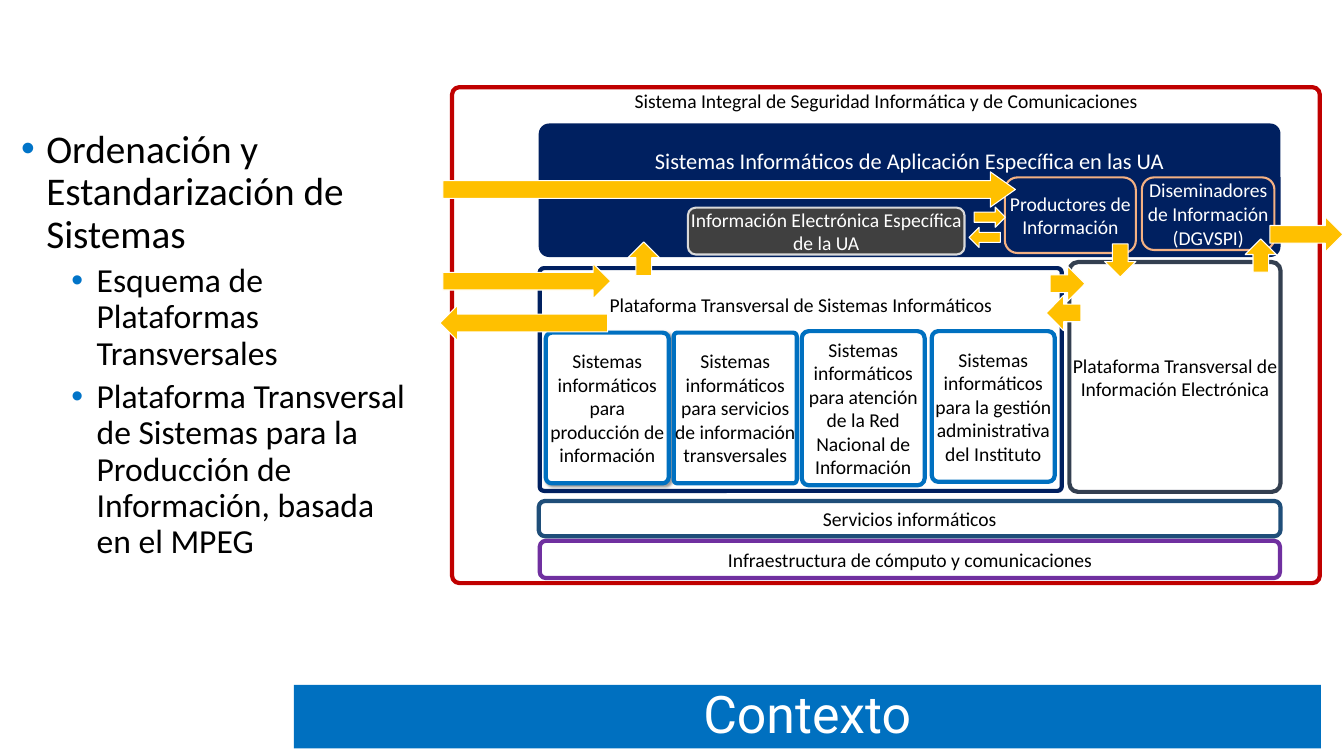
from lxml.etree import SubElement
from pptx import Presentation
from pptx.dml.color import RGBColor
from pptx.enum.shapes import MSO_SHAPE
from pptx.enum.text import MSO_ANCHOR, MSO_AUTO_SIZE, PP_ALIGN
from pptx.oxml.ns import qn
from pptx.util import Inches, Pt

NAVY, BLUE, GOLD, WHITE, BLACK = "002060", "0070C0", "FFC000", "FFFFFF", "000000"
ARROWS = {
    "up": MSO_SHAPE.UP_ARROW,
    "down": MSO_SHAPE.DOWN_ARROW,
    "left": MSO_SHAPE.LEFT_ARROW,
    "right": MSO_SHAPE.RIGHT_ARROW,
}


def rgb(value):
    return RGBColor.from_string(value)


def add_text(p, text, size=28, color=BLACK, font="Calibri", align=PP_ALIGN.CENTER,
             spacing=None, before=None):
    r = p.add_run()
    r.text = text
    r.font.size, r.font.name = Pt(size), font
    r.font.color.rgb = rgb(color)
    p.alignment = align
    if spacing:
        p.line_spacing = spacing
    if before:
        p.space_before = Pt(before)


def add_shape(s, kind, at, fill, line=None, width=6):
    sp = s.shapes.add_shape(kind, *map(Inches, at))
    sp.shadow.inherit = False
    sp.fill.solid()
    sp.fill.fore_color.rgb = rgb(fill)
    if line:
        sp.line.color.rgb = rgb(line)
        sp.line.width = Pt(width)
    else:
        sp.line.fill.background()
    return sp


def add_box(s, at, text, line=None, fill=WHITE, color=BLACK, size=28, corner=0.167,
            width=6, top=None):
    """Rounded box; text is centred, or starts at the inset `top` when given."""
    sp = add_shape(s, MSO_SHAPE.ROUNDED_RECTANGLE, at, fill, line, width)
    sp.adjustments[0] = corner
    tf = sp.text_frame
    tf.word_wrap = True
    tf.margin_left = tf.margin_right = tf.margin_bottom = 0
    tf.margin_top = Inches(top or 0)
    tf.vertical_anchor = MSO_ANCHOR.MIDDLE if top is None else MSO_ANCHOR.TOP
    for i, part in enumerate(text.split("\n")):
        p = tf.add_paragraph() if i else tf.paragraphs[0]
        add_text(p, part, size=size, color=color)
    return sp


def add_arrow(s, direction, at, head=0.5):
    sp = add_shape(s, ARROWS[direction], at, GOLD, WHITE, 1.5)
    sp.adjustments[1] = head


def add_soft_shadow(sp):
    effects = sp._element.spPr.find(qn("a:effectLst"))
    shadow = SubElement(effects, qn("a:outerShdw"), blurRad=str(Pt(4)),
                        dist=str(Pt(3)), dir="2700000")
    color = SubElement(shadow, qn("a:srgbClr"), val=BLACK)
    SubElement(color, qn("a:alpha"), val="40000")


def add_bullet(p, left):
    pPr = p._p.get_or_add_pPr()
    pPr.set("marL", str(Inches(left)))
    pPr.set("indent", str(Inches(-0.5)))
    color = SubElement(pPr, qn("a:buClr"))
    SubElement(color, qn("a:srgbClr"), val="0174C8")
    SubElement(pPr, qn("a:buFont"), typeface="Arial")
    SubElement(pPr, qn("a:buChar"), char="•")


def add_title(s):
    sp = s.shapes.title
    sp.left, sp.top, sp.width, sp.height = map(Inches, (5.83, 13.59, 20.38, 1.26))
    sp.fill.solid()
    sp.fill.fore_color.rgb = rgb(BLUE)
    tf = sp.text_frame
    tf.auto_size = MSO_AUTO_SIZE.NONE
    tf.vertical_anchor = MSO_ANCHOR.MIDDLE
    add_text(tf.paragraphs[0], "Contexto", size=74, color=WHITE, font="Roboto", spacing=0.9)


def add_bullets(s):
    items = [
        (0, "Ordenación y Estandarización de Sistemas"),
        (1, "Esquema de Plataformas Transversales"),
        (1, "Plataforma Transversal de Sistemas para la Producción de Información, "
            "basada en el MPEG"),
    ]
    tf = s.shapes.add_textbox(*map(Inches, (0.32, 1.71, 7.93, 10.28))).text_frame
    tf.word_wrap = True
    tf.vertical_anchor = MSO_ANCHOR.MIDDLE
    for i, (level, text) in enumerate(items):
        p = tf.add_paragraph() if i else tf.paragraphs[0]
        p.level = level
        add_bullet(p, 0.5 + level)
        add_text(p, text, size=48 if level else 56, align=PP_ALIGN.LEFT,
                 spacing=0.9, before=10 if i else None)


def add_platforms(s):
    # Security frame and application layer
    add_box(s, (8.97, 1.73, 17.22, 9.84),
            "Sistema Integral de Seguridad Informática y de Comunicaciones",
            "C00000", corner=0.015, top=0)
    add_box(s, (10.69, 2.45, 14.72, 2.65),
            "Sistemas Informáticos de Aplicación Específica en las UA",
            fill=NAVY, color=WHITE, size=32, corner=0.077, top=0.41)

    # Base layers
    add_box(s, (10.71, 10.73, 14.69, 0.74),
            "Infraestructura de cómputo y comunicaciones", "7030A0")
    add_box(s, (10.69, 9.94, 14.72, 0.7), "Servicios informáticos", "1F4E79", corner=0.178)

    # Transversal platforms
    add_box(s, (21.22, 5.2, 4.19, 4.56),
            "Plataforma Transversal de Información Electrónica", "333F50", corner=0.041)
    add_box(s, (10.71, 5.32, 10.36, 4.42),
            "Plataforma Transversal de Sistemas Informáticos", NAVY, corner=0.019, top=0.47)


def add_systems(s):
    systems = [
        (10.83, 6.6, 2.99, 0.049, "para producción de información"),
        (13.37, 6.6, 2.99, 0.029, "para servicios de información transversales"),
        (15.91, 6.57, 3.06, 0.058, "para atención de la Red Nacional de Información"),
        (18.49, 6.57, 2.99, 0.053, "para la gestión administrativa del Instituto"),
    ]
    boxes = [add_box(s, (x, y, 2.44, h), "Sistemas informáticos " + purpose, BLUE, corner=corner)
             for x, y, h, corner, purpose in systems]
    add_soft_shadow(boxes[0])


def add_units(s):
    add_box(s, (19.94, 3.52, 2.6, 1.5), "Productores de Información",
            "F4B183", NAVY, WHITE, width=3)
    add_box(s, (22.66, 3.52, 2.63, 1.44), "Diseminadores de Información\n(DGVSPI)",
            "F4B183", NAVY, WHITE, width=3)
    add_box(s, (13.65, 4.12, 5.49, 0.93), "Información Electrónica Específica de la UA",
            "D9D9D9", "404040", WHITE, width=3)


def add_flows(s):
    # Between layers
    add_arrow(s, "down", (21.92, 4.84, 0.62, 0.66))
    add_arrow(s, "up", (24.71, 4.74, 0.62, 0.66))
    add_arrow(s, "up", (12.46, 4.8, 0.63, 0.67))
    # Between platforms
    add_arrow(s, "right", (20.84, 5.28, 0.69, 0.7))
    add_arrow(s, "left", (20.76, 5.86, 0.69, 0.7))
    # Into and out of the frame
    add_arrow(s, "right", (25.2, 4.3, 1.45, 0.7))
    add_arrow(s, "right", (8.79, 3.41, 11.36, 0.7), head=0.71)
    add_arrow(s, "right", (8.79, 5.23, 3.33, 0.7))
    add_arrow(s, "left", (8.73, 6.06, 3.33, 0.7))
    # Between specific information and producers
    add_arrow(s, "right", (19.33, 4.11, 0.62, 0.4))
    add_arrow(s, "left", (19.23, 4.51, 0.62, 0.4))


def main():
    prs = Presentation()
    prs.slide_width, prs.slide_height = Inches(26.67), Inches(15)
    s = prs.slides.add_slide(prs.slide_layouts[5])
    add_title(s)
    add_bullets(s)
    add_platforms(s)
    add_systems(s)
    add_units(s)
    add_flows(s)
    prs.save("out.pptx")


if __name__ == "__main__":
    main()
